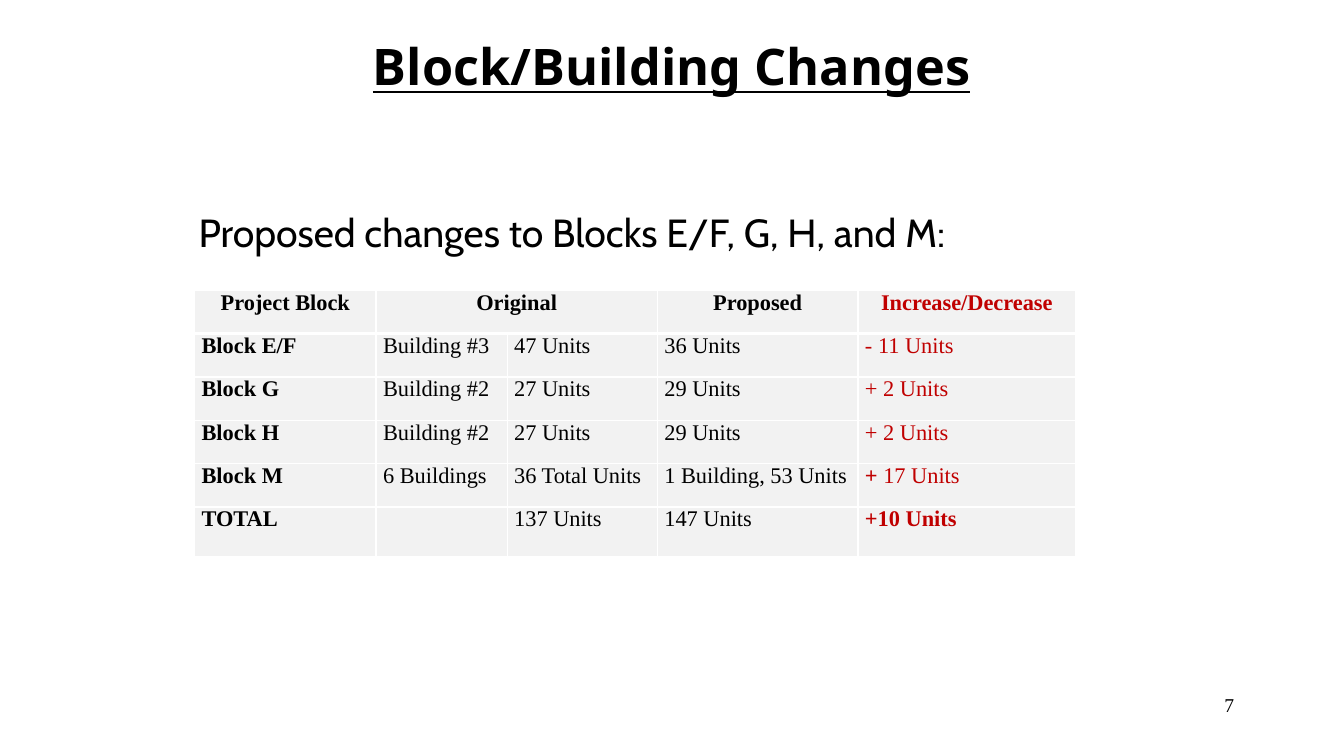
"""Build the Block/Building Changes slide."""
from dataclasses import dataclass

from lxml.etree import SubElement
from pptx import Presentation
from pptx.dml.color import RGBColor as RGB
from pptx.enum.text import MSO_ANCHOR as Anchor, PP_ALIGN as Align
from pptx.oxml.ns import qn
from pptx.util import Inches, Pt


@dataclass(frozen=True)
class Theme:
    ink: str = "000000"
    change: str = "C00000"
    cell_fill: str = "F2F2F2"
    grid: str = "FFFFFF"
    title_font: str = "Noto Sans"
    lead_font: str = "Cabin"
    table_font: str = "Times New Roman"
    title_size: int = 36
    lead_size: int = 28
    table_size: int = 16
    number_size: int = 14
    grid_width: int = 1
    header_rule: int = 3


class BlockSlide:
    """Hold the theme and the slide, and add each kind of element."""

    def __init__(self, deck, theme):
        self.theme = theme
        self.slide = deck.slides.add_slide(deck.slide_layouts[5])

    def style(self, run, font, size, color=None, bold=False):
        run.font.name = font
        run.font.size = Pt(size)
        run.font.bold = bold
        run.font.color.rgb = RGB.from_string(color or self.theme.ink)

    def title(self, text, left, top, width, height):
        heading = self.slide.shapes.title
        heading.left, heading.top = Inches(left), Inches(top)
        heading.width, heading.height = Inches(width), Inches(height)
        frame = heading.text_frame
        frame.text = text
        frame.vertical_anchor = Anchor.MIDDLE
        line = frame.paragraphs[0]
        line.alignment = Align.CENTER
        self.style(line.runs[0], self.theme.title_font, self.theme.title_size, bold=True)
        line.runs[0].font.underline = True

    def text(self, text, left, top, width, height, font, size, align=Align.LEFT, indent=0):
        box = self.slide.shapes.add_textbox(
            Inches(left), Inches(top), Inches(width), Inches(height))
        frame = box.text_frame
        frame.word_wrap = True
        frame.margin_left = Inches(0.1 + indent)
        frame.text = text
        line = frame.paragraphs[0]
        line.alignment = align
        self.style(line.runs[0], font, size)

    def borders(self, cell, top, bottom):
        side_width = self.theme.grid_width
        sides = {"L": side_width, "R": side_width, "T": top, "B": bottom}
        for side, width in sides.items():
            edge = SubElement(cell._tc.get_or_add_tcPr(), qn(f"a:ln{side}"), w=str(Pt(width)))
            fill = SubElement(edge, qn("a:solidFill"))
            SubElement(fill, qn("a:srgbClr"), val=self.theme.grid)

    def cell(self, cell, text, color, bold, align):
        """Fill one cell; a bar in the text ends a bold lead-in."""
        cell.fill.solid()
        cell.fill.fore_color.rgb = RGB.from_string(self.theme.cell_fill)
        cell.margin_left = cell.margin_right = Inches(0.07)
        cell.margin_top = cell.margin_bottom = 0
        line = cell.text_frame.paragraphs[0]
        line.alignment = align
        lead, _, rest = text.rpartition("|")
        for part, strong in ((lead, True), (rest, bold)):
            if part:
                run = line.add_run()
                run.text = part
                self.style(run, self.theme.table_font, self.theme.table_size, color, strong)

    def table(self, rows, left, top, widths, heights):
        grid = self.slide.shapes.add_table(
            len(rows), len(widths), Inches(left), Inches(top),
            Inches(sum(widths)), Inches(sum(heights))).table
        grid.first_row = grid.horz_banding = False
        for column, width in zip(grid.columns, widths):
            column.width = Inches(width)
        for row, height in zip(grid.rows, heights):
            row.height = Inches(height)
        last_row, last_column = len(rows) - 1, len(widths) - 1
        thin, thick = self.theme.grid_width, self.theme.header_rule
        for r, row in enumerate(rows):
            for c, text in enumerate(row):
                is_header, is_change = r == 0, c == last_column
                self.borders(grid.cell(r, c), thick if r == 1 else thin,
                             thick if is_header else thin)
                self.cell(
                    grid.cell(r, c), text,
                    color=self.theme.change if is_change else self.theme.ink,
                    bold=is_header or c == 0 or (is_change and r == last_row),
                    align=Align.CENTER if is_header else Align.LEFT)
        grid.cell(0, 1).merge(grid.cell(0, 2))


def main():
    deck = Presentation()
    deck.slide_width, deck.slide_height = Inches(13.33), Inches(7.5)
    theme = Theme()
    page = BlockSlide(deck, theme)
    page.title("Block/Building Changes", 1.14, 0, 11.04, 1.3)
    page.text("Proposed changes to Blocks E/F, G, H, and M:", 1.37, 2.02, 10.27, 5.06,
              theme.lead_font, theme.lead_size, indent=0.5)
    page.text("7", 9.56, 6.83, 2.78, 0.5,
              theme.table_font, theme.number_size, Align.RIGHT)
    block_changes = [
        ("Project Block", "Original", "", "Proposed", "Increase/Decrease"),
        ("Block E/F", "Building #3", "47 Units", "36 Units", "- 11 Units"),
        ("Block G", "Building #2", "27 Units", "29 Units", "+ 2 Units"),
        ("Block H", "Building #2", "27 Units", "29 Units", "+ 2 Units"),
        ("Block M", "6 Buildings", "36 Total Units", "1 Building, 53 Units", "+| 17 Units"),
        ("TOTAL", "", "137 Units", "147 Units", "+10 Units"),
    ]
    page.table(block_changes, 1.93, 2.88,
               widths=[1.8, 1.3, 1.49, 1.99, 2.16], heights=[0.43] * 5 + [0.49])
    deck.save("out.pptx")


if __name__ == "__main__":
    main()
